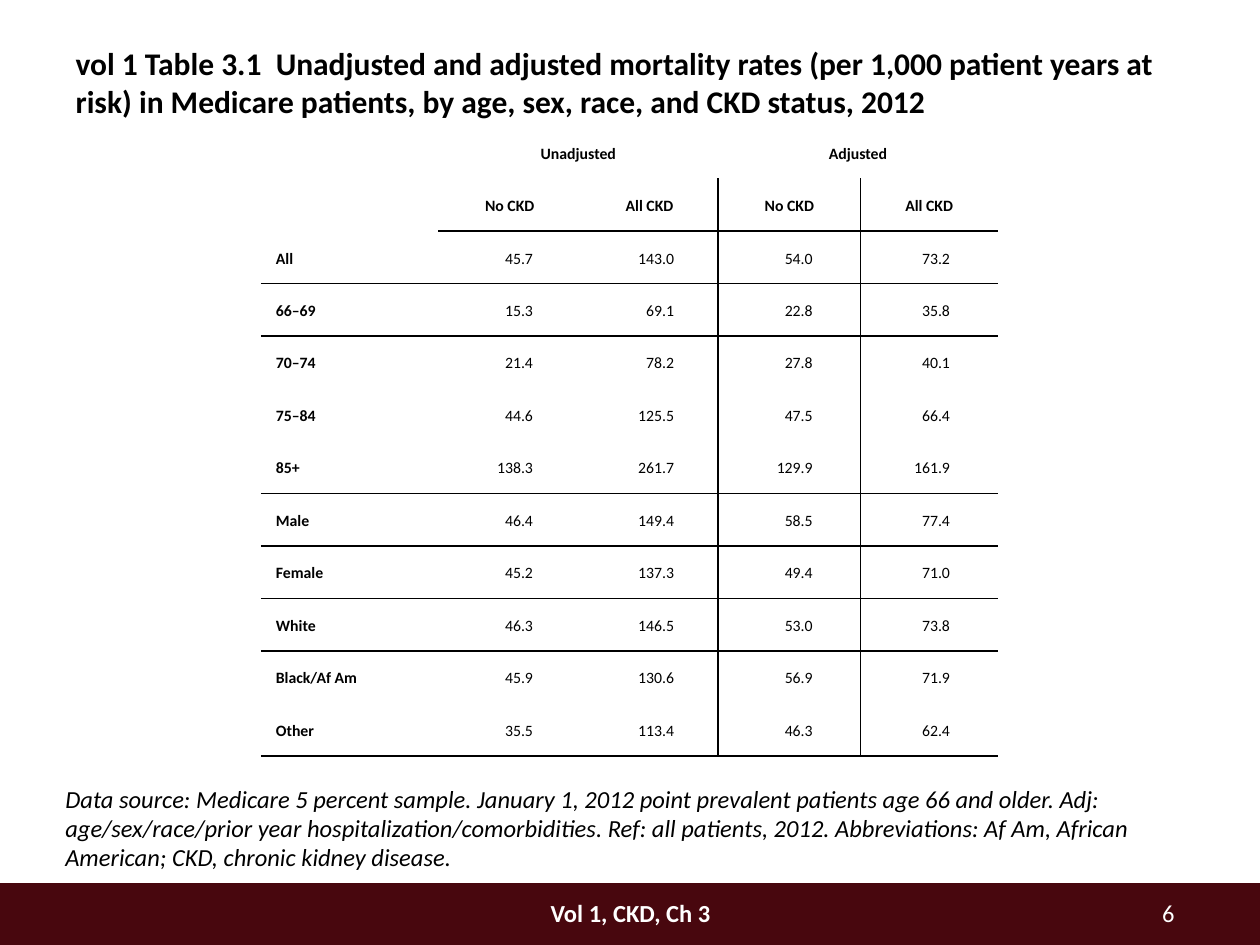
"""Builds the slide with the table of mortality rates by CKD status."""
from lxml import etree
from pptx import Presentation
from pptx import util as u
from pptx.dml.color import RGBColor
from pptx.enum import shapes, text
from pptx.oxml.ns import qn

COLORS = {"ink": "000000", "band": "48070E", "light": "FFFFFF"}
PLAIN_TABLE = "{2D5ABB26-0587-4C30-8999-92F81FD0307C}"
ALIGN = text.PP_ALIGN
COLUMN_WIDTHS = [1.41, 1.13, 1.09, 1.13, 1.09]
ROWS_RULED_BELOW = {1, 2, 6, 8, 11}
HEADINGS = [
    ["", "Unadjusted", "", "Adjusted", ""],
    ["", "No CKD", "All CKD", "No CKD", "All CKD"],
]
RATES = [
    ["All", "45.7", "143.0", "54.0", "73.2"],
    ["66–69", "15.3", "69.1", "22.8", "35.8"],
    ["70–74", "21.4", "78.2", "27.8", "40.1"],
    ["75–84", "44.6", "125.5", "47.5", "66.4"],
    ["85+", "138.3", "261.7", "129.9", "161.9"],
    ["Male", "46.4", "149.4", "58.5", "77.4"],
    ["Female", "45.2", "137.3", "49.4", "71.0"],
    ["White", "46.3", "146.5", "53.0", "73.8"],
    ["Black/Af Am", "45.9", "130.6", "56.9", "71.9"],
    ["Other", "35.5", "113.4", "46.3", "62.4"],
]


def ruled_below(row, column):
    return row in ROWS_RULED_BELOW and (row > 1 or column > 0)


def cell_sides(row, column):
    sides = {
        "lnL": column == 3 and row > 0,
        "lnR": column == 2 and row > 0,
        "lnT": ruled_below(row - 1, column),
        "lnB": ruled_below(row, column),
    }
    return [side for side, shown in sides.items() if shown]


class SlideBuilder:
    def __init__(self, slide, font="Calibri"):
        self.slide = slide
        self.font = font

    def add_words(self, frame, words, size, color="ink", align=ALIGN.LEFT,
                  bold=False, italic=False):
        paragraph = frame.paragraphs[0]
        paragraph.alignment = align
        run = paragraph.add_run()
        run.text = words
        run.font.name = self.font
        run.font.size = u.Pt(size)
        run.font.bold = bold
        run.font.italic = italic
        run.font.color.rgb = RGBColor.from_string(COLORS[color])
        return paragraph

    def band(self, left, top, width, height):
        band = self.slide.shapes.add_shape(
            shapes.MSO_SHAPE.RECTANGLE, *map(u.Inches, (left, top, width, height)))
        band.shadow.inherit = False
        band.fill.solid()
        band.fill.fore_color.rgb = RGBColor.from_string(COLORS["band"])
        band.line.fill.background()

    def title(self, words, left, top, width, height):
        title = self.slide.shapes.title
        title.left, title.top, title.width, title.height = map(
            u.Inches, (left, top, width, height))
        title.text_frame.auto_size = text.MSO_AUTO_SIZE.NONE
        title.text_frame.vertical_anchor = text.MSO_ANCHOR.TOP
        self.add_words(title.text_frame, words, 18, bold=True)

    def textbox(self, words, left, top, width, height, **style):
        box = self.slide.shapes.add_textbox(*map(u.Inches, (left, top, width, height)))
        box.text_frame.word_wrap = True
        self.add_words(box.text_frame, words, 14, **style)

    def rule(self, cell, side, position):
        line = etree.Element(qn(f"a:{side}"), w=str(u.Pt(1)))
        fill = etree.SubElement(line, qn("a:solidFill"))
        etree.SubElement(fill, qn("a:srgbClr"), val=COLORS["ink"])
        cell._tc.get_or_add_tcPr().insert(position, line)

    def cell(self, cell, words, row, column):
        heading = row < len(HEADINGS)
        label = heading or column == 0
        cell.fill.background()
        cell.vertical_anchor = text.MSO_ANCHOR.MIDDLE
        cell.margin_top = cell.margin_bottom = 0
        cell.margin_left = u.Inches(0.12 if label else 0.13)
        cell.margin_right = u.Inches(0.12 if label else 0.35 if column == 2 else 0.38)
        for position, side in enumerate(cell_sides(row, column)):
            self.rule(cell, side, position)
        if words:
            align = ALIGN.CENTER if heading else ALIGN.LEFT if label else ALIGN.RIGHT
            paragraph = self.add_words(cell.text_frame, words, 9, align=align, bold=label)
            paragraph.line_spacing = 1.15

    def table(self, rows, left, top, height):
        frame = self.slide.shapes.add_table(
            len(rows), len(COLUMN_WIDTHS), u.Inches(left), u.Inches(top),
            u.Inches(sum(COLUMN_WIDTHS)), u.Inches(height))
        table = frame.table
        table.first_row = table.horz_banding = False
        for style in frame.element.iter(qn("a:tableStyleId")):
            style.text = PLAIN_TABLE
        for column, width in zip(table.columns, COLUMN_WIDTHS):
            column.width = u.Inches(width)
        for first in (1, 3):
            table.cell(0, first).merge(table.cell(0, first + 1))
        for r, row in enumerate(rows):
            table.rows[r].height = u.Inches(height / len(rows))
            for c, words in enumerate(row):
                self.cell(table.cell(r, c), words, r, c)


def main():
    deck = Presentation()
    deck.slide_width, deck.slide_height = u.Inches(10), u.Inches(7.5)
    builder = SlideBuilder(deck.slides.add_slide(deck.slide_layouts[5]))
    builder.band(0, 7.01, 10, 0.49)
    builder.textbox("Vol 1, CKD, Ch 3", 3.92, 7.08, 2.17, 0.33,
                    color="light", align=ALIGN.CENTER, bold=True)
    builder.textbox("6", 8.42, 7.08, 1, 0.3, color="light", align=ALIGN.RIGHT)
    builder.table(HEADINGS + RATES, 2.07, 1, 5)
    builder.title(
        "vol 1 Table 3.1  Unadjusted and adjusted mortality rates (per 1,000 patient years "
        "at risk) in Medicare patients, by age, sex, race, and CKD status, 2012",
        0.5, 0.3, 9, 0.6)
    builder.textbox(
        "Data source: Medicare 5 percent sample. January 1, 2012 point prevalent patients "
        "age 66 and older. Adj: age/sex/race/prior year hospitalization/comorbidities. "
        "Ref: all patients, 2012. Abbreviations: Af Am, African American; CKD, chronic "
        "kidney disease.",
        0.42, 6.17, 9.08, 0.58, italic=True)
    deck.save("out.pptx")


if __name__ == "__main__":
    main()
